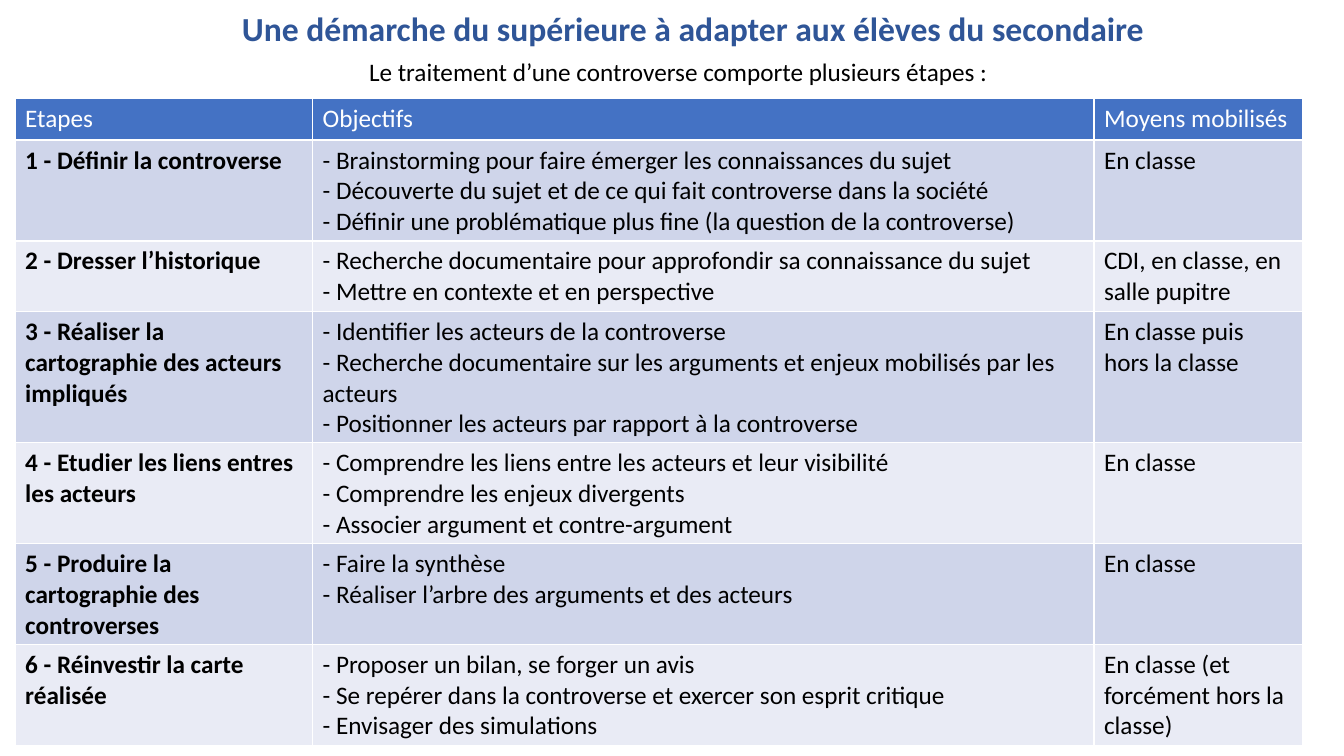
from dataclasses import dataclass

from pptx import Presentation
from pptx.dml.color import RGBColor
from pptx.enum import text as text_enum
from pptx.util import Inches, Pt


@dataclass(frozen=True)
class Theme:
    font: str = "Calibri"
    title_size: int = 24
    body_size: int = 18
    title: str = "2F5597"
    ink: str = "000000"
    white: str = "FFFFFF"
    header: str = "4472C4"
    bands: tuple[str, str] = ("CFD5EA", "E9EBF5")


@dataclass(frozen=True)
class Heading:
    text: str
    box: tuple[float, float, float, float]
    size: int
    color: str
    bold: bool


@dataclass(frozen=True)
class Step:
    name: str
    goals: tuple[str, ...]
    means: str
    height: float = 1.0


THEME = Theme()

HEADINGS = (
    Heading("Une démarche du supérieure à adapter aux élèves du secondaire",
            (2.3, 0.03, 10.02, 0.5), THEME.title_size, THEME.title, True),
    Heading("Le traitement d’une controverse comporte plusieurs étapes :",
            (3.56, 0.51, 7.52, 0.4), THEME.body_size, THEME.ink, False),
)

HEADER = Step("Etapes", ("Objectifs",), "Moyens mobilisés", 0.41)
STEPS = (
    Step("1 - Définir la controverse",
         ("Brainstorming pour faire émerger les connaissances du sujet",
          "Découverte du sujet et de ce qui fait controverse dans la société",
          "Définir une problématique plus fine (la question de la controverse)"),
         "En classe"),
    Step("2 - Dresser l’historique",
         ("Recherche documentaire pour approfondir sa connaissance du sujet",
          "Mettre en contexte et en perspective"),
         "CDI, en classe, en salle pupitre", 0.7),
    Step("3 - Réaliser la cartographie des acteurs impliqués",
         ("Identifier les acteurs de la controverse",
          "Recherche documentaire sur les arguments et enjeux mobilisés par les acteurs",
          "Positionner les acteurs par rapport à la controverse"),
         "En classe puis hors la classe", 1.3),
    Step("4 - Etudier les liens entres les acteurs",
         ("Comprendre les liens entre les acteurs et leur visibilité",
          "Comprendre les enjeux divergents",
          "Associer argument et contre-argument"),
         "En classe"),
    Step("5 - Produire la cartographie des controverses",
         ("Faire la synthèse",
          "Réaliser l’arbre des arguments et des acteurs"),
         "En classe"),
    Step("6 - Réinvestir la carte réalisée",
         ("Proposer un bilan, se forger un avis",
          "Se repérer dans la controverse et exercer son esprit critique",
          "Envisager des simulations"),
         "En classe (et forcément hors la classe)"),
)

COLUMN_WIDTHS = (2.95, 7.75, 2.07)
TABLE_LEFT, TABLE_TOP = 0.15, 0.98


def write_text(frame, lines: tuple[str, ...], size: int, color: str, bold: bool) -> None:
    """Fill a text frame with one left-aligned paragraph per line."""
    frame.text = "\n".join(lines)
    font_format = {"name": THEME.font, "size": Pt(size), "bold": bold}
    for paragraph in frame.paragraphs:
        paragraph.alignment = text_enum.PP_ALIGN.LEFT
        paragraph.space_before = Pt(0)
        font = paragraph.runs[0].font
        for attribute, value in font_format.items():
            setattr(font, attribute, value)
        font.color.rgb = RGBColor.from_string(color)


def place_heading(placeholder, heading: Heading) -> None:
    for attribute, value in zip(("left", "top", "width", "height"), heading.box):
        setattr(placeholder, attribute, Inches(value))
    frame = placeholder.text_frame
    frame_format = {
        "word_wrap": True,
        "vertical_anchor": text_enum.MSO_ANCHOR.TOP,
        "auto_size": text_enum.MSO_AUTO_SIZE.SHAPE_TO_FIT_TEXT,
    }
    for attribute, value in frame_format.items():
        setattr(frame, attribute, value)
    write_text(frame, (heading.text,), heading.size, heading.color, heading.bold)


def fill_row(table, index: int, step: Step) -> None:
    is_header = index == 0
    fill = THEME.header if is_header else THEME.bands[(index - 1) % 2]
    color = THEME.white if is_header else THEME.ink
    goals = step.goals if is_header else tuple(f"- {goal}" for goal in step.goals)
    table.rows[index].height = Inches(step.height)
    for column, lines in enumerate(((step.name,), goals, (step.means,))):
        cell = table.cell(index, column)
        cell.fill.solid()
        cell.fill.fore_color.rgb = RGBColor.from_string(fill)
        bold = column == 0 and not is_header
        write_text(cell.text_frame, lines, THEME.body_size, color, bold)


def add_steps_table(slide) -> None:
    rows = (HEADER, *STEPS)
    table = slide.shapes.add_table(
        len(rows), len(COLUMN_WIDTHS), Inches(TABLE_LEFT), Inches(TABLE_TOP),
        Inches(sum(COLUMN_WIDTHS)), Inches(sum(row.height for row in rows))).table
    for column, width in zip(table.columns, COLUMN_WIDTHS):
        column.width = Inches(width)
    for index, step in enumerate(rows):
        fill_row(table, index, step)


def main() -> None:
    presentation = Presentation()
    presentation.slide_width = Inches(13.33)
    presentation.slide_height = Inches(7.5)
    slide = presentation.slides.add_slide(presentation.slide_layouts[0])

    # Title and introductory sentence
    for placeholder, heading in zip(slide.placeholders, HEADINGS):
        place_heading(placeholder, heading)

    # Steps of the method
    add_steps_table(slide)

    presentation.save("out.pptx")


if __name__ == "__main__":
    main()
